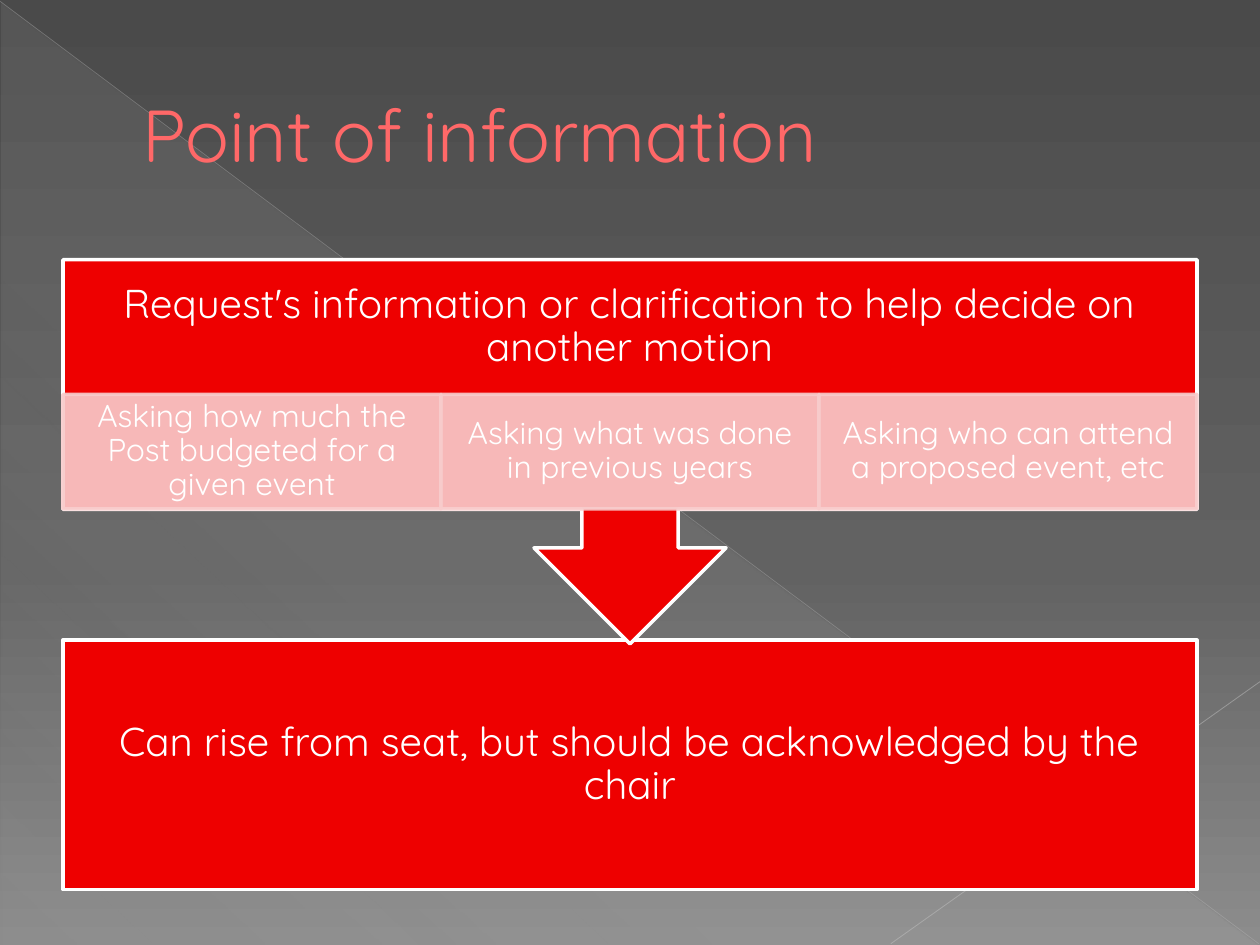
import pptx
import pptx.util
import pptx.dml.color
import pptx.enum.shapes
import pptx.enum.text
import pptx.oxml
import pptx.oxml.ns
import lxml.etree
from dataclasses import dataclass

Inches = pptx.util.Inches
Pt = pptx.util.Pt
Shape = pptx.enum.shapes.MSO_SHAPE
Align = pptx.enum.text.PP_ALIGN
qn = pptx.oxml.ns.qn


@dataclass(frozen=True)
class Theme:
    font: str = "Quicksand"
    title: str = "FF6868"
    title_outline: str = "A50000"
    red: str = "EE0000"
    pink: str = "F8CCCC"
    white: str = "FFFFFF"
    background: tuple = ((0, "4A4A4A", 100), (60, "626262", 100), (100, "8C8C8C", 100))
    wedge: tuple = ((0, "D2D2D2", 10), (70, "D2D2D2", 8), (100, "D2D2D2", 1))
    title_size: float = 42
    main_size: float = 23
    detail_size: float = 18
    border: float = 2


THEME = Theme()
LEFT, WIDTH = 0.5, 9
MAIN_INSETS = (0.18, 0.18)
DETAIL_INSETS = (0.14, 0.03)
DETAILS = (
    "Asking how much the Post budgeted for a given event",
    "Asking what was done in previous years",
    "Asking who can attend a proposed event, etc",
)


def rgb(color):
    return pptx.dml.color.RGBColor.from_string(color)


def add_alpha(color_element, opacity):
    if opacity < 100:
        alpha = lxml.etree.SubElement(color_element, qn("a:alpha"))
        alpha.set("val", str(opacity * 1000))


def fill_gradient(owner, fill, stops, clockwise_angle):
    """Fill with (position, colour, opacity) stops, all in percent."""
    fill.gradient()
    fill.gradient_angle = 360 - clockwise_angle
    stop_list = owner.element.xpath(".//a:gradFill/a:gsLst")[0]
    for old_stop in list(stop_list):
        stop_list.remove(old_stop)
    for position, color, opacity in stops:
        stop = lxml.etree.SubElement(stop_list, qn("a:gs"), pos=str(position * 1000))
        add_alpha(lxml.etree.SubElement(stop, qn("a:srgbClr"), val=color), opacity)


def style_text(frame, text, size, color, align, line_spacing=None):
    frame.text = text
    frame.word_wrap = True
    frame.auto_size = pptx.enum.text.MSO_AUTO_SIZE.NONE
    frame.vertical_anchor = pptx.enum.text.MSO_ANCHOR.MIDDLE
    para = frame.paragraphs[0]
    para.alignment = align
    para.line_spacing = line_spacing
    span = para.runs[0]
    span.font.name = THEME.font
    span.font.size = Pt(size)
    span.font.color.rgb = rgb(color)
    return para


def write_label(box, text, size, insets):
    frame = box.text_frame
    frame.margin_left = frame.margin_right = Inches(insets[0])
    frame.margin_top = frame.margin_bottom = Inches(insets[1])
    style_text(frame, text, size, THEME.white, Align.CENTER, 0.9)


def add_block(page, kind, place, fill, line, opacity=100):
    block = page.shapes.add_shape(kind, *map(Inches, place))
    block.shadow.inherit = False
    block.fill.solid()
    block.fill.fore_color.rgb = rgb(fill)
    block.line.color.rgb = rgb(line)
    block.line.width = Pt(THEME.border)
    for color_element in block.element.spPr.iter(qn("a:srgbClr")):
        add_alpha(color_element, opacity)
    return block


def add_hairline(page, start, end, color, width, opacity):
    line = page.shapes.add_connector(
        pptx.enum.shapes.MSO_CONNECTOR.STRAIGHT, *map(Inches, start + end))
    line.line.color.rgb = rgb(color)
    line.line.width = Pt(width)
    properties = line.element.spPr
    add_alpha(next(properties.iter(qn("a:srgbClr"))), opacity)
    lxml.etree.SubElement(properties, qn("a:effectLst"))


def add_backdrop(page):
    fill_gradient(page, page.background.fill, THEME.background, 90)
    wedge = page.shapes.add_shape(
        Shape.RIGHT_TRIANGLE, *map(Inches, (0.01, 0.02, 9.98, 7.48)))
    wedge.shadow.inherit = False
    wedge.line.fill.background()
    fill_gradient(wedge, wedge.fill, THEME.wedge, 133)
    add_hairline(page, (0, 0.01), (9.99, 7.49), "BFBFBF", 0.39, 35)
    add_hairline(page, (10, 5.41), (7.07, 7.49), "C6C6C6", 0.47, 45)


def set_title(page, text):
    title = page.shapes.title
    title.left, title.top, title.width, title.height = map(
        Inches, (LEFT, 0.29, WIDTH, 1.53))
    para = style_text(title.text_frame, text, THEME.title_size, THEME.title, Align.LEFT)
    properties = para._p.get_or_add_pPr()
    properties.set("marL", str(Inches(0.53)))
    properties.set("indent", "0")
    # Thin outline around the letters
    outline = lxml.etree.Element(qn("a:ln"), w=str(Pt(0.5)))
    solid = lxml.etree.SubElement(outline, qn("a:solidFill"))
    lxml.etree.SubElement(solid, qn("a:srgbClr"), val=THEME.title_outline)
    para.runs[0].font._element.insert(0, outline)
    # Bring the title in front of the backdrop
    title.element.getparent().append(title.element)


def add_process(page):
    # Closing step
    closing = add_block(page, Shape.RECTANGLE, (LEFT, 5.08, WIDTH, 1.98),
                        THEME.red, THEME.white)
    write_label(closing, "Can rise from seat, but should be acknowledged by the chair",
                THEME.main_size, MAIN_INSETS)

    # Opening step: the callout is turned to point down, so its text stays upright apart
    callout = add_block(page, Shape.UP_ARROW_CALLOUT, (LEFT, 2.06, WIDTH, 3.05),
                        THEME.red, THEME.white)
    callout.rotation = 180
    heading = page.shapes.add_textbox(*map(Inches, (LEFT, 2.06, WIDTH, 1.07)))
    write_label(heading,
                "Request's information or clarification to help decide on another motion",
                THEME.main_size, MAIN_INSETS)

    # Row of examples
    width = WIDTH / len(DETAILS)
    for column, text in enumerate(DETAILS):
        detail = add_block(page, Shape.RECTANGLE,
                           (LEFT + column * width, 3.13, width, 0.91),
                           THEME.pink, THEME.pink, opacity=90)
        write_label(detail, text, THEME.detail_size, DETAIL_INSETS)


def main():
    deck = pptx.Presentation()
    deck.slide_width, deck.slide_height = Inches(10), Inches(7.5)
    page = deck.slides.add_slide(deck.slide_layouts[5])
    add_backdrop(page)
    set_title(page, "Point of information")
    add_process(page)
    deck.save("out.pptx")


if __name__ == "__main__":
    main()
